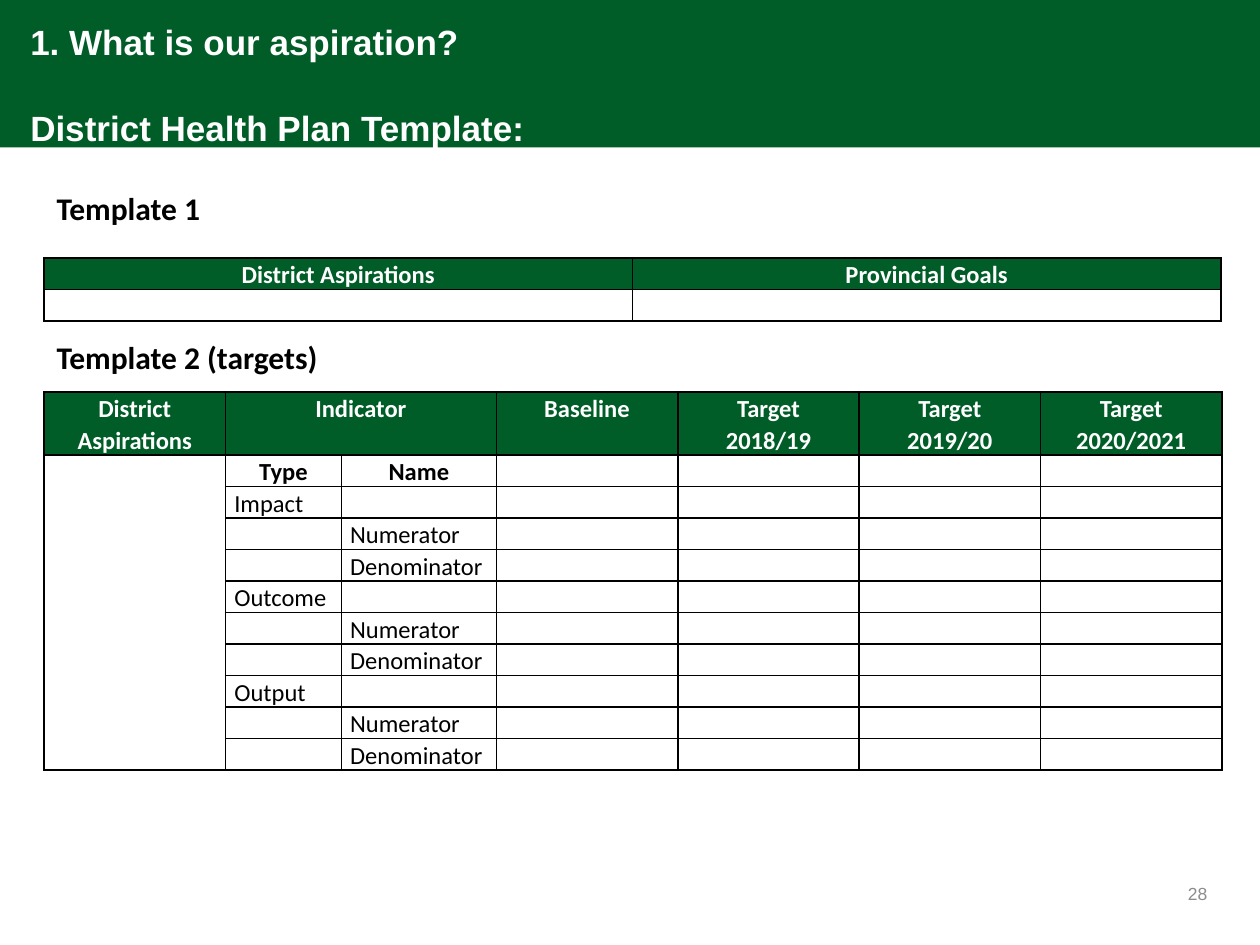
from dataclasses import dataclass

from lxml.etree import SubElement
from pptx import Presentation
from pptx.dml.color import RGBColor
from pptx.enum.shapes import MSO_SHAPE
from pptx.enum.text import MSO_ANCHOR, PP_ALIGN
from pptx.oxml.ns import qn
from pptx.util import Inches, Pt

GREEN = RGBColor(0x00, 0x5D, 0x28)
WHITE = RGBColor(0xFF, 0xFF, 0xFF)
BLACK = RGBColor(0x00, 0x00, 0x00)
GREY = RGBColor(0x8C, 0x8C, 0x8C)

WIDTH, HEIGHT = Inches(10), Inches(7.5)
LEFT = 0.035  # left edge of the content, as a share of the width
ROW = 0.25  # height of one text line in the tables, in inches

TITLE = dict(name="Arial", size=Pt(20), bold=True, color=WHITE)
HEADING = dict(name="Calibri", size=Pt(18), bold=True, color=BLACK)
HEADER = dict(name="Calibri", size=Pt(14), bold=True, color=WHITE)
SUBHEADER = {**HEADER, "color": BLACK}
BODY = {**SUBHEADER, "bold": False}
NUMBER = dict(name="Arial", size=Pt(10), bold=False, color=GREY)


@dataclass
class Area:
    """A rectangle given in shares of the slide's size."""
    left: float
    top: float
    width: float
    height: float

    def lengths(self) -> tuple:
        return (round(self.left * WIDTH), round(self.top * HEIGHT),
                round(self.width * WIDTH), round(self.height * HEIGHT))


@dataclass
class Grid:
    """A table: its top as a share of the height, column widths in inches."""
    top: float
    columns: list
    header_lines: int
    rows: list
    bold_rows: int = 1


def write(frame, text: str, style: dict, align=PP_ALIGN.LEFT) -> None:
    """Write one paragraph per line of the text."""
    frame.text = text
    for para in frame.paragraphs:
        para.alignment = align
        for span in para.runs:
            for name, value in style.items():
                if name == "color":
                    span.font.color.rgb = value
                else:
                    setattr(span.font, name, value)


def add_label(page, area: Area, text: str, style: dict,
              align=PP_ALIGN.LEFT, anchor=MSO_ANCHOR.TOP) -> None:
    frame = page.shapes.add_textbox(*area.lengths()).text_frame
    frame.word_wrap = True
    frame.vertical_anchor = anchor
    write(frame, text, style, align)


def add_borders(cell) -> None:
    properties = cell._tc.get_or_add_tcPr()
    for index, side in enumerate(("lnL", "lnR", "lnT", "lnB")):
        line = properties.makeelement(qn(f"a:{side}"), {"w": str(Pt(1))})
        fill = SubElement(line, qn("a:solidFill"))
        SubElement(fill, qn("a:srgbClr"), val=str(BLACK))
        properties.insert(index, line)


def format_cell(cell, text: str, style: dict, header: bool) -> None:
    for side, margin in dict(left=0.07, right=0.07, top=0, bottom=0).items():
        setattr(cell, f"margin_{side}", Inches(margin))
    centred = style["bold"]
    write(cell.text_frame, text, style,
          PP_ALIGN.CENTER if centred else PP_ALIGN.LEFT)
    for para in cell.text_frame.paragraphs:
        para.line_spacing = 1.07
        if not para.runs:  # keeps empty rows as low as written ones
            SubElement(para._p, qn("a:endParaRPr"), sz="1400")
    if header:
        cell.fill.solid()
        cell.fill.fore_color.rgb = GREEN
    else:
        cell.fill.background()
    add_borders(cell)


def add_grid(page, grid: Grid):
    heights = [ROW * grid.header_lines] + [ROW] * (len(grid.rows) - 1)
    area = Area(LEFT, grid.top, sum(grid.columns) / 10, sum(heights) / 7.5)
    table = page.shapes.add_table(
        len(grid.rows), len(grid.columns), *area.lengths()).table
    for column, width in zip(table.columns, grid.columns):
        column.width = Inches(width)
    for row, height in zip(table.rows, heights):
        row.height = Inches(height)
    for r, texts in enumerate(grid.rows):
        style = HEADER if r == 0 else SUBHEADER if r < grid.bold_rows else BODY
        for c in range(len(grid.columns)):
            text = texts[c] if c < len(texts) else ""
            format_cell(table.cell(r, c), text, style, r == 0)
    return table


def main() -> None:
    deck = Presentation()
    deck.slide_width, deck.slide_height = WIDTH, HEIGHT
    page = deck.slides.add_slide(deck.slide_layouts[5])

    # Green band behind the title
    band = page.shapes.add_shape(
        MSO_SHAPE.RECTANGLE, *Area(0, 0, 1, 0.156).lengths())
    band.shadow.inherit = False
    band.fill.solid()
    band.fill.fore_color.rgb = GREEN
    band.line.fill.background()
    page.shapes._spTree.insert(2, band._element)

    # Title
    title = page.shapes.title
    title.left, title.top, title.width, title.height = Area(
        0.014, 0.016, 0.811, 0.147).lengths()
    title.text_frame.word_wrap = True
    title.text_frame.vertical_anchor = MSO_ANCHOR.MIDDLE
    write(title.text_frame,
          "1. What is our aspiration?\nDistrict Health Plan Template:", TITLE)
    title.text_frame.paragraphs[1].space_before = Pt(25)

    # Headings above the tables
    for top, text in ((0.193, "Template 1"), (0.351, "Template 2 (targets)")):
        add_label(page, Area(LEFT, top, 0.385, 0.053), text, HEADING)

    # Template 1
    add_grid(page, Grid(0.273, [4.67, 4.67], 1,
                        [["District Aspirations", "Provincial Goals"], []]))

    # Template 2
    rows = [["District Aspirations", "Indicator", "", "Baseline",
             "Target\n2018/19", "Target\n2019/20", "Target 2020/2021"],
            ["", "Type", "Name"]]
    for kind in ("Impact", "Outcome", "Output"):
        rows += [["", kind], ["", "", "Numerator"], ["", "", "Denominator"]]
    targets = add_grid(page, Grid(0.415, [1.44, 0.92, 1.23] + [1.44] * 4, 2,
                                  rows, bold_rows=2))
    targets.cell(0, 1).merge(targets.cell(0, 2))
    targets.cell(1, 0).merge(targets.cell(len(rows) - 1, 0))

    # Page number
    add_label(page, Area(0.906, 0.919, 0.062, 0.053), "28", NUMBER,
              PP_ALIGN.RIGHT, MSO_ANCHOR.MIDDLE)

    deck.save("out.pptx")


if __name__ == "__main__":
    main()
